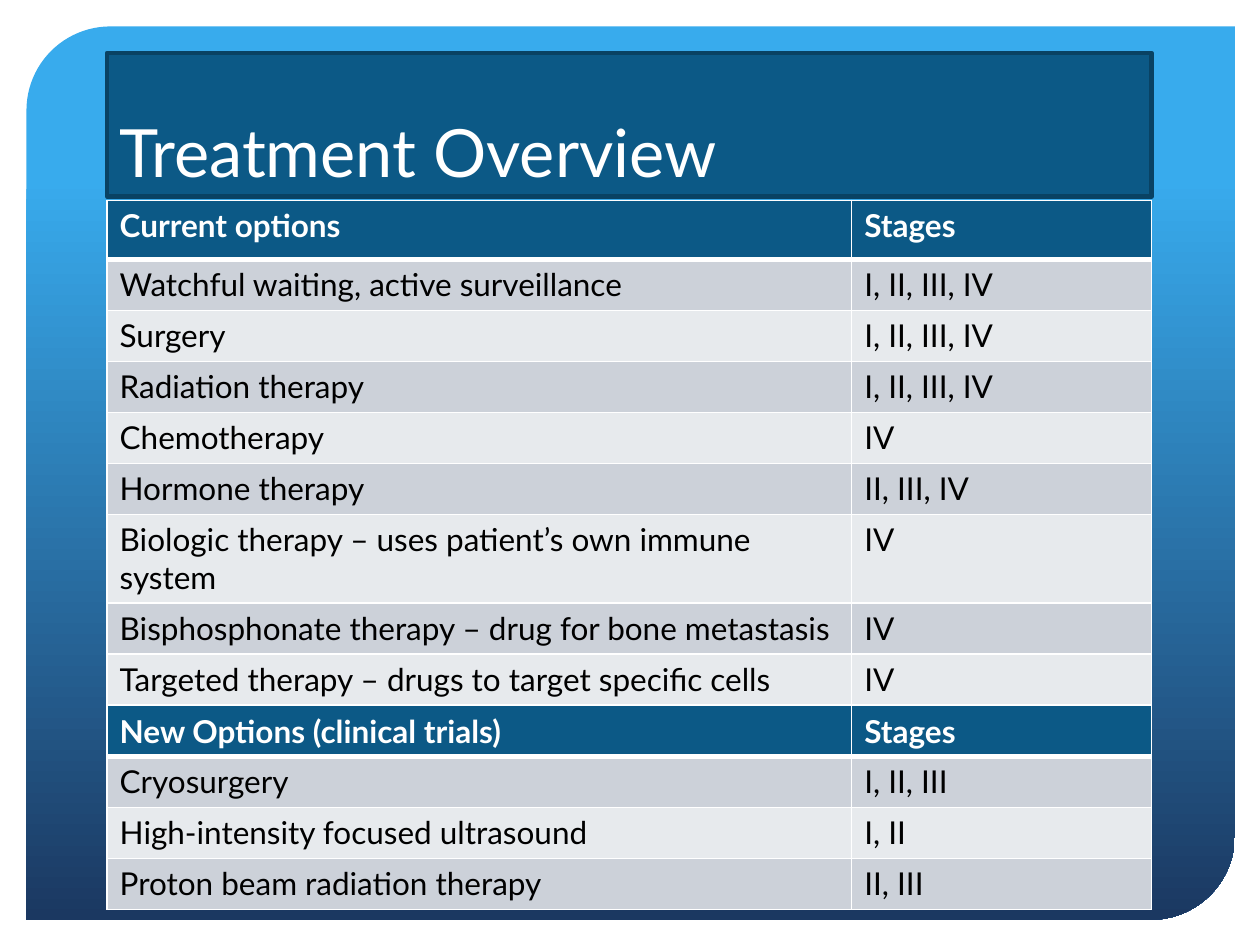
from dataclasses import dataclass

from lxml.etree import SubElement
from pptx import Presentation
from pptx.dml.color import RGBColor
from pptx.enum.shapes import MSO_SHAPE
from pptx.enum.text import MSO_ANCHOR, PP_ALIGN
from pptx.oxml.ns import qn
from pptx.util import Inches, Pt


@dataclass(frozen=True)
class Theme:
    font: str = "Lato"
    title_size: float = 38
    table_size: float = 18
    white: str = "FFFFFF"
    black: str = "000000"
    primary: str = "0C5986"
    outline: str = "094263"
    bands: tuple = ("CCD1D9", "E7EAED")
    gradient: tuple = ((0.17, "38ABED"), (1, "1B3861"))
    rule: float = 1
    header_rule: float = 3


class SlideBuilder:
    """Draws on one slide; lengths are units of a 100 by 75 grid."""

    columns = 100

    def __init__(self, deck, theme):
        self.theme = theme
        self.unit = deck.slide_width / self.columns
        self.page = deck.slides.add_slide(deck.slide_layouts[6])

    def grid(self, *lengths):
        return [round(length * self.unit) for length in lengths]

    def shape(self, kind, *frame):
        box = self.page.shapes.add_shape(kind, *self.grid(*frame))
        box.shadow.inherit = False
        return box

    def backdrop(self, *frame):
        panel = self.shape(MSO_SHAPE.ROUND_2_DIAG_RECTANGLE, *frame)
        panel.adjustments[0], panel.adjustments[1] = 0.094, 0
        panel.line.fill.background()
        panel.fill.gradient()
        panel.fill.gradient_angle = 270
        for stop, (position, color) in zip(panel.fill.gradient_stops, self.theme.gradient):
            stop.position = position
            stop.color.rgb = RGBColor.from_string(color)

    def title(self, text, *frame):
        theme = self.theme
        box = self.shape(MSO_SHAPE.RECTANGLE, *frame)
        box.fill.solid()
        box.fill.fore_color.rgb = RGBColor.from_string(theme.primary)
        box.line.color.rgb = RGBColor.from_string(theme.outline)
        box.line.width = Pt(2.5)
        box.text_frame.vertical_anchor = MSO_ANCHOR.BOTTOM
        box.text_frame.word_wrap = True
        self.set_text(box.text_frame, text, theme.title_size, theme.white)

    def set_text(self, frame, text, size, color, bold=False):
        para = frame.paragraphs[0]
        para.text = text
        para.alignment = PP_ALIGN.LEFT
        para.font.name = self.theme.font
        para.font.size = Pt(size)
        para.font.bold = bold
        para.font.color.rgb = RGBColor.from_string(color)

    def table(self, records, left, top, widths, header_height, row_height):
        """Header row followed by banded rows."""
        theme = self.theme
        heights = [header_height] + [row_height] * (len(records) - 1)
        frame = self.grid(left, top, sum(widths), sum(heights))
        table = self.page.shapes.add_table(len(records), len(widths), *frame).table
        table.horz_banding = False
        for column, width in zip(table.columns, self.grid(*widths)):
            column.width = width
        for row, height in zip(table.rows, self.grid(*heights)):
            row.height = height
        for index, record in enumerate(records):
            header = index == 0
            fill = theme.primary if header else theme.bands[(index - 1) % 2]
            color = theme.white if header else theme.black
            above = theme.header_rule if index == 1 else theme.rule
            below = theme.header_rule if header else theme.rule
            for column, text in enumerate(record):
                cell = table.cell(index, column)
                self.borders(cell, above, below)
                cell.fill.solid()
                cell.fill.fore_color.rgb = RGBColor.from_string(fill)
                self.set_text(cell.text_frame, text, theme.table_size, color, header)

    def borders(self, cell, above, below):
        properties = cell._tc.get_or_add_tcPr()
        sides = {"L": self.theme.rule, "R": self.theme.rule, "T": above, "B": below}
        for side, width in sides.items():
            line = SubElement(properties, qn(f"a:ln{side}"), w=str(Pt(width)))
            solid = SubElement(line, qn("a:solidFill"))
            SubElement(solid, qn("a:srgbClr"), val=self.theme.white)


CURRENT_OPTIONS = [
    ("Current options", "Stages"),
    ("Watchful waiting, active surveillance", "I, II, III, IV"),
    ("Surgery", "I, II, III, IV"),
    ("Radiation therapy", "I, II, III, IV"),
    ("Chemotherapy", "IV"),
    ("Hormone therapy", "II, III, IV"),
    ("Biologic therapy – uses patient’s own immune system", "IV"),
    ("Bisphosphonate therapy – drug for bone metastasis", "IV"),
    ("Targeted therapy – drugs to target specific cells", "IV"),
]
NEW_OPTIONS = [
    ("New Options (clinical trials)", "Stages"),
    ("Cryosurgery", "I, II, III"),
    ("High-intensity focused ultrasound", "I, II"),
    ("Proton beam radiation therapy", "II, III"),
]


def main():
    deck = Presentation()
    deck.slide_width, deck.slide_height = Inches(10), Inches(7.5)
    builder = SlideBuilder(deck, Theme())
    left, widths, row_height = 8.5, (59.1, 23.8), 4.05
    builder.backdrop(2.1, 2.1, 95.9, 70.9)
    builder.title("Treatment Overview", left, 4.2, sum(widths), 11.4)
    builder.table(CURRENT_OPTIONS, left, 15.9, widths, 4.7, row_height)
    builder.table(NEW_OPTIONS, left, 56, widths, row_height, row_height)
    deck.save("out.pptx")


if __name__ == "__main__":
    main()
